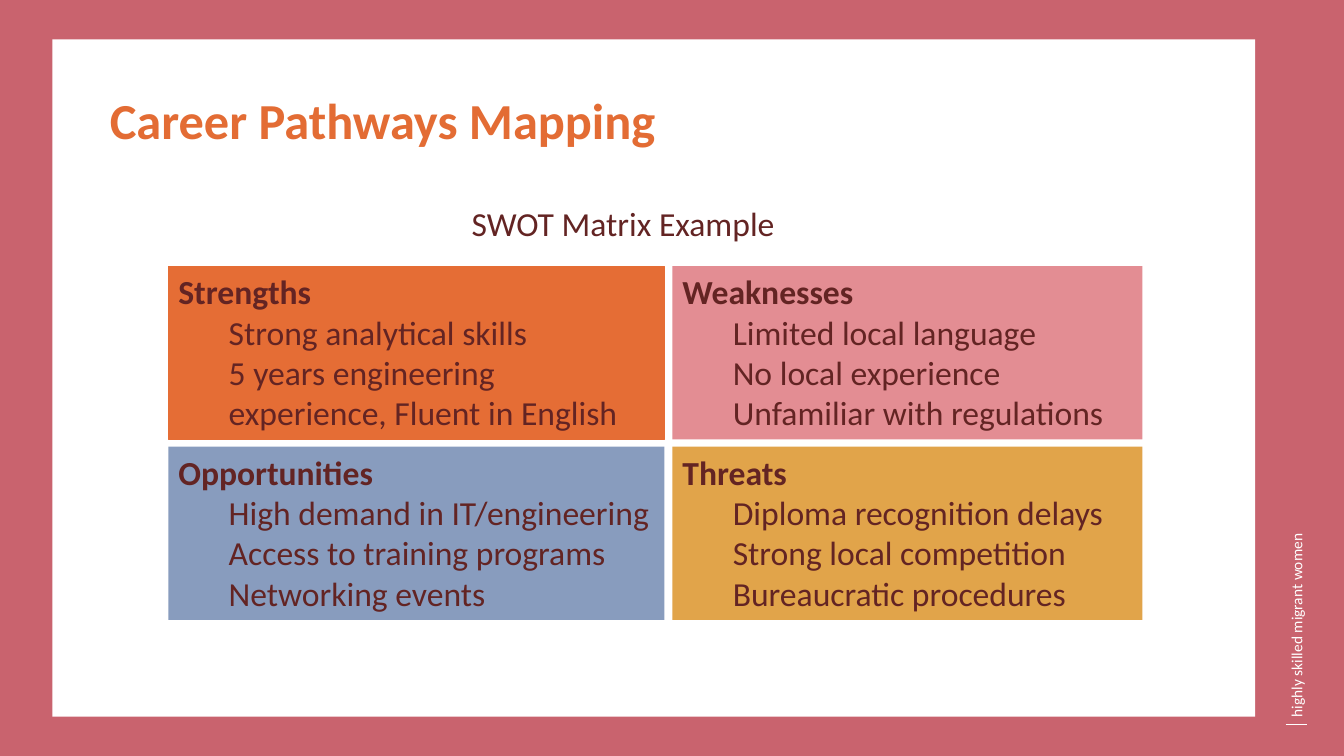
from pptx import Presentation
from pptx.dml.color import RGBColor
from pptx.enum.shapes import MSO_CONNECTOR, MSO_SHAPE
from pptx.enum.text import MSO_ANCHOR as Anchor, MSO_AUTO_SIZE as AutoSize, PP_ALIGN as Align
from pptx.oxml.ns import qn
from pptx.util import Pt

PX = 9144  # 100 px to the inch
FONT = "Calibri"

WHITE = RGBColor(0xFF, 0xFF, 0xFF)
ROSE = RGBColor(0xC9, 0x63, 0x6E)
TITLE_ORANGE = RGBColor(0xE3, 0x6C, 0x34)
MAROON = RGBColor(0x63, 0x24, 0x23)
ORANGE = RGBColor(0xE5, 0x6D, 0x35)
PINK = RGBColor(0xE3, 0x8D, 0x93)
BLUE = RGBColor(0x88, 0x9C, 0xBE)
GOLD = RGBColor(0xE1, 0xA4, 0x4A)

COLUMNS = [(167, 492), (667, 466)]  # left, width
ROW_TOP, ROW_STEP, ROW_HEIGHT = 264, 179, 172
SWOT = [
    ("Strengths", ORANGE, ORANGE,
     ["Strong analytical skills",
      "5 years engineering experience, Fluent in English"]),
    ("Weaknesses", PINK, None,
     ["Limited local language", "No local experience",
      "Unfamiliar with regulations"]),
    ("Opportunities", BLUE, None,
     ["High demand in IT/engineering", "Access to training programs",
      "Networking events"]),
    ("Threats", GOLD, None,
     ["Diploma recognition delays", "Strong local competition",
      "Bureaucratic procedures"]),
]


def emu(*lengths):
    return [length * PX for length in lengths]


def add_run(paragraph, text, size, color, bold=False):
    run = paragraph.add_run()
    run.text = text
    font = run.font
    font.name, font.size, font.bold = FONT, Pt(size), bold
    font.color.rgb = color


def add_rectangle(slide, box, fill, outline=None):
    shape = slide.shapes.add_shape(MSO_SHAPE.RECTANGLE, *emu(*box))
    shape.shadow.inherit = False
    shape.fill.solid()
    shape.fill.fore_color.rgb = fill
    if outline is None:
        shape.line.fill.background()
    else:
        shape.line.color.rgb = outline
        shape.line.width = Pt(0.75)
    return shape


def add_text(slide, box, text, size, color, bold=False, align=Align.LEFT,
             anchor=Anchor.TOP, spacing=None):
    shape = slide.shapes.add_textbox(*emu(*box))
    frame = shape.text_frame
    frame.word_wrap = True
    frame.vertical_anchor = anchor
    paragraph = frame.paragraphs[0]
    paragraph.alignment = align
    paragraph.line_spacing = spacing
    add_run(paragraph, text, size, color, bold)
    return shape


def add_rule(slide, start, end):
    rule = slide.shapes.add_connector(MSO_CONNECTOR.STRAIGHT, *emu(*start, *end))
    rule.line.color.rgb = WHITE
    rule.line.width = Pt(1)
    properties = rule._element.spPr
    properties.append(properties.makeelement(qn("a:effectLst"), {}))


def add_panel(slide, box, heading, fill, outline, items):
    """Draw one SWOT quadrant: a bold heading over indented items."""
    panel = add_rectangle(slide, box, fill, outline)
    frame = panel.text_frame
    frame.word_wrap = True
    frame.auto_size = AutoSize.SHAPE_TO_FIT_TEXT
    frame.vertical_anchor = Anchor.TOP
    paragraph = frame.paragraphs[0]
    paragraph.alignment = Align.LEFT
    add_run(paragraph, heading, 24, MAROON, bold=True)
    for item in items:
        paragraph = frame.add_paragraph()
        paragraph.alignment = Align.LEFT
        paragraph.level = 1
        properties = paragraph._p.get_or_add_pPr()
        properties.set("marL", str(50 * PX))
        properties.set("indent", "0")
        add_run(paragraph, item, 24, MAROON)


def add_frame(slide):
    """Draw the coloured border, the white page and the side label."""
    add_rectangle(slide, (0, 0, 1333, 750), ROSE)
    add_rectangle(slide, (52, 39, 1193, 672), WHITE)
    add_rule(slide, (1275, 719), (1296, 719))
    label = add_text(slide, (1076, 497, 420, 29),
                     "highly skilled migrant women", 11, WHITE)
    label.rotation = 270


def main():
    presentation = Presentation()
    presentation.slide_width, presentation.slide_height = emu(1333, 750)
    slide = presentation.slides.add_slide(presentation.slide_layouts[6])
    add_frame(slide)
    add_text(slide, (99, 90, 1099, 88), "Career Pathways Mapping", 36,
             TITLE_ORANGE, bold=True, spacing=0.9)
    add_text(slide, (168, 159, 900, 125), "SWOT Matrix Example", 24, MAROON,
             align=Align.CENTER, anchor=Anchor.MIDDLE)
    for index, quadrant in enumerate(SWOT):
        row, column = divmod(index, 2)
        left, width = COLUMNS[column]
        box = (left, ROW_TOP + row * ROW_STEP, width, ROW_HEIGHT)
        add_panel(slide, box, *quadrant)
    presentation.save("out.pptx")


if __name__ == "__main__":
    main()
